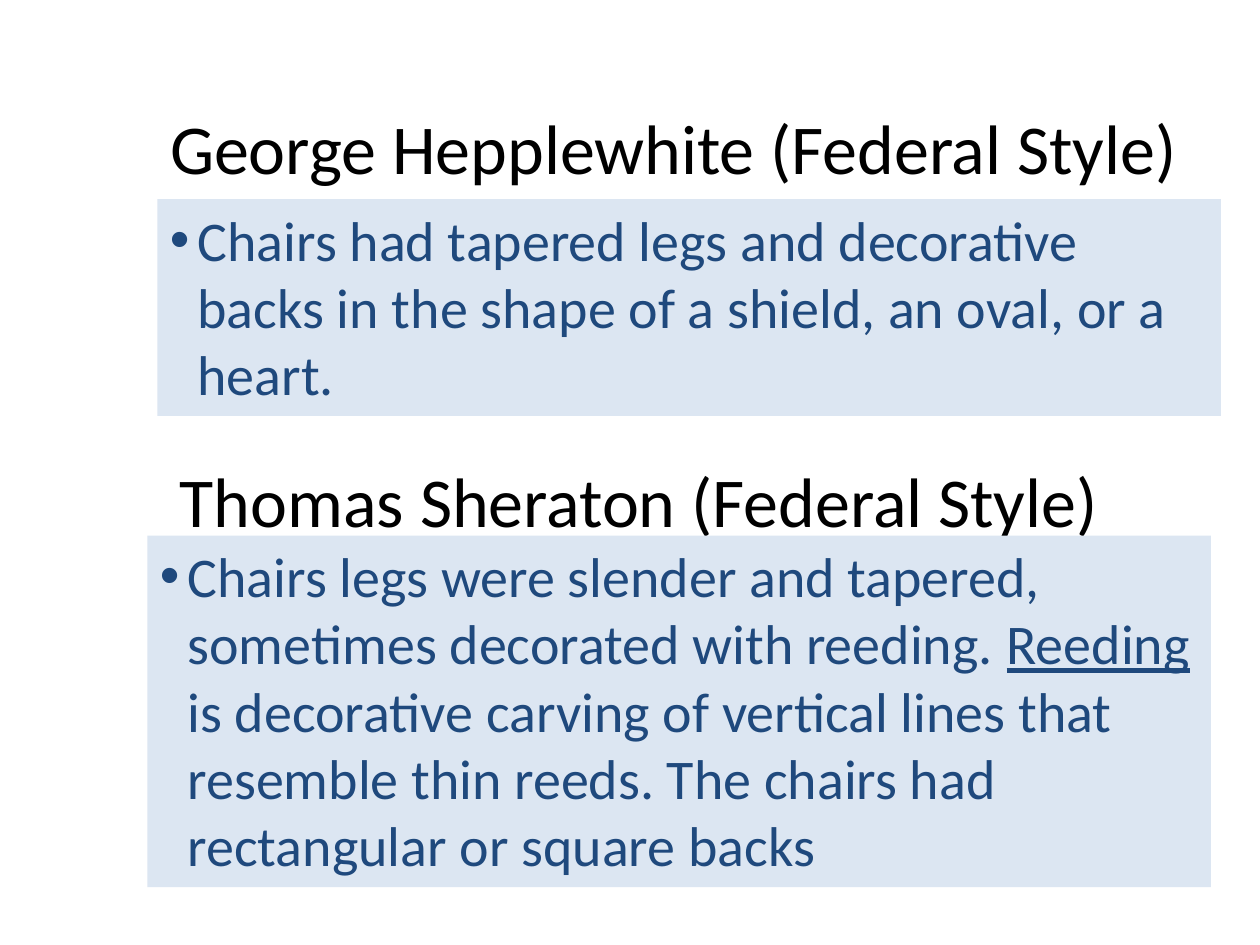
from pptx import Presentation
from pptx import util as u
from pptx.dml.color import RGBColor
from pptx.enum import shapes, text
from pptx.oxml.ns import qn
from lxml import etree


def color(code):
    return RGBColor.from_string(code)


class Deck:
    """Holds the style and the current slide, and adds its elements."""

    face = "Calibri"
    ink = "000000"
    blue = "1F497D"
    pale = "DCE6F2"
    hang = u.Inches(0.22)

    def __init__(self, wide, high):
        self.prs = Presentation()
        self.prs.slide_width = u.Inches(wide)
        self.prs.slide_height = u.Inches(high)
        self.slide = self.prs.slides.add_slide(self.prs.slide_layouts[5])

    def start(self, shape, wrap):
        frame = shape.text_frame
        frame.word_wrap = wrap
        frame.auto_size = text.MSO_AUTO_SIZE.SHAPE_TO_FIT_TEXT
        frame.vertical_anchor = text.MSO_ANCHOR.TOP
        para = frame.paragraphs[0]
        para.alignment = text.PP_ALIGN.LEFT
        return para

    def add_run(self, para, words, size, ink, under=False):
        run = para.add_run()
        run.text = words
        font = run.font
        font.name = self.face
        font.size = u.Pt(size)
        font.color.rgb = color(ink)
        if under:
            font.underline = True

    def head(self, shape, words):
        self.add_run(self.start(shape, False), words, 40, self.ink)

    def title(self, words, *box):
        shape = self.slide.shapes.title
        shape.left, shape.top, shape.width, shape.height = map(u.Inches, box)
        self.head(shape, words)

    def label(self, words, *box):
        self.head(self.slide.shapes.add_textbox(*map(u.Inches, box)), words)

    def panel(self, parts, *box):
        shape = self.slide.shapes.add_shape(
            shapes.MSO_SHAPE.RECTANGLE, *map(u.Inches, box))
        shape.shadow.inherit = False
        shape.fill.solid()
        shape.fill.fore_color.rgb = color(self.pale)
        shape.line.fill.background()
        para = self.start(shape, True)
        self.bullet(para)
        for words, under in parts:
            self.add_run(para, words, 32, self.blue, under)

    def bullet(self, para):
        props = para._p.get_or_add_pPr()
        props.set("marL", str(self.hang))
        props.set("indent", str(-self.hang))
        etree.SubElement(props, qn("a:buFont"), typeface="Arial")
        etree.SubElement(props, qn("a:buChar"), char="•")


def main():
    deck = Deck(10, 7.5)
    deck.title("George Hepplewhite (Federal Style)", 1.25, 0.78, 8.27, 0.77)
    deck.panel([
        ("Chairs had tapered legs and decorative backs in the shape of "
         "a shield, an oval, or a heart.", False),
    ], 1.25, 1.58, 8.44, 1.72)
    deck.label("Thomas Sheraton (Federal Style)", 1.33, 3.58, 7.56, 0.77)
    deck.panel([
        ("Chairs legs were slender and tapered, sometimes decorated "
         "with reeding. ", False),
        ("Reeding", True),
        (" is decorative carving of vertical lines that resemble thin "
         "reeds. The chairs had rectangular or square backs", False),
    ], 1.17, 4.25, 8.44, 2.79)
    deck.prs.save("out.pptx")


if __name__ == "__main__":
    main()
